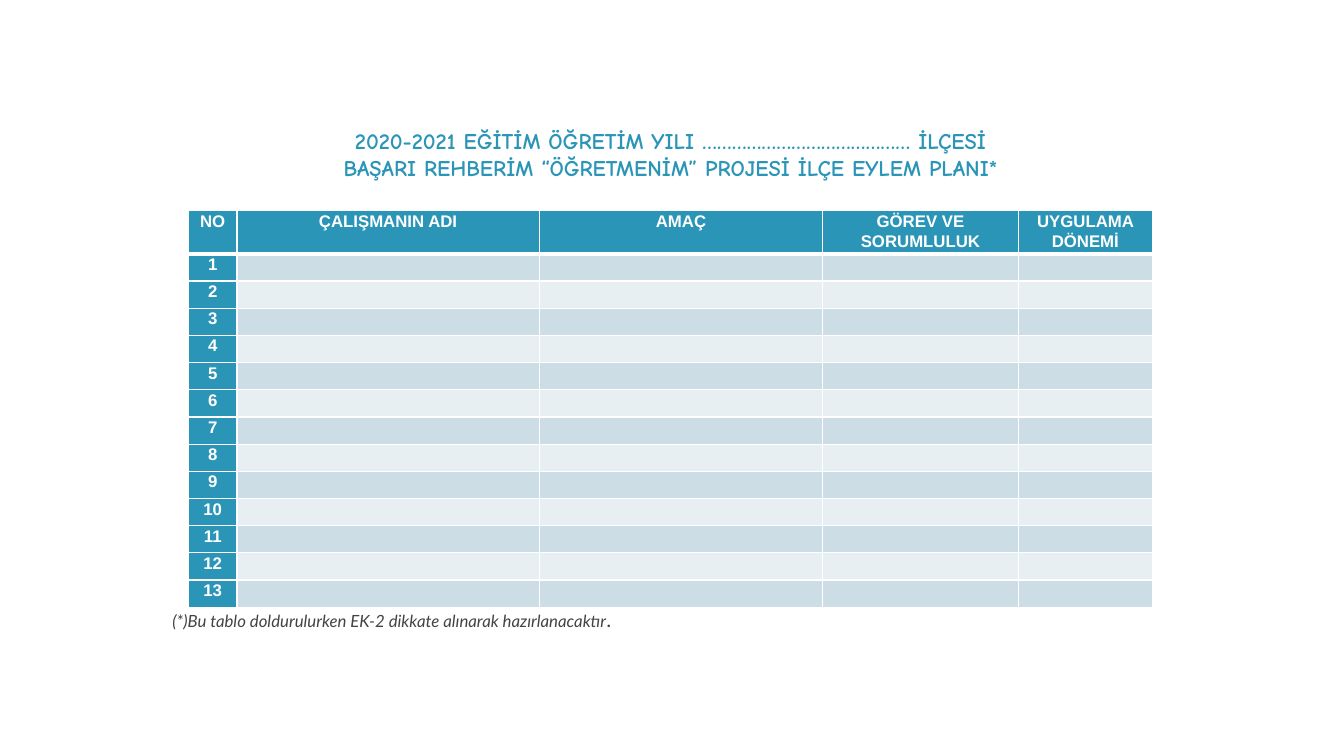
from lxml.etree import SubElement
from pptx import Presentation
from pptx.dml.color import RGBColor
from pptx.enum.text import PP_ALIGN as Align
from pptx.oxml import parse_xml
from pptx.oxml.ns import nsdecls, qn
from pptx.util import Inches, Pt

COLORS = {
    "teal": "2A95B7",
    "band_dark": "CDDDE6",
    "band_light": "E8EFF3",
    "white": "FFFFFF",
    "note": "434343",
}
HEADINGS = ["NO", "ÇALIŞMANIN ADI", "AMAÇ", "GÖREV VE SORUMLULUK", "UYGULAMA DÖNEMİ"]
COLUMN_WIDTHS = [0.48, 3, 2.81, 1.94, 1.33]
TITLE_LINES = [
    "2020-2021 EĞİTİM ÖĞRETİM YILI …………………………………… İLÇESİ",
    "BAŞARI REHBERİM “ÖĞRETMENİM” PROJESİ İLÇE EYLEM PLANI*",
]
PLAN_ROWS = 13
HEADER_HEIGHT = 0.42
ROW_HEIGHT = 0.27


def color(name):
    return RGBColor.from_string(COLORS[name])


def add_span(para, text, font, size, ink, bold=False, italic=False):
    span = para.add_run()
    span.text = text
    span.font.name = font
    span.font.size = Pt(size)
    span.font.color.rgb = color(ink)
    span.font.bold = bold
    span.font.italic = italic


def add_box(page, left, top, width, height, indent=0.1):
    box = page.shapes.add_textbox(Inches(left), Inches(top), Inches(width), Inches(height))
    frame = box.text_frame
    frame.word_wrap = True
    frame.margin_left = Inches(indent)
    frame.margin_right = frame.margin_top = frame.margin_bottom = Inches(0.1)
    return frame.paragraphs[0]


def add_title(page):
    para = add_box(page, 1.53, 1.16, 10.24, 1.09)
    para.alignment = Align.CENTER
    for number, line in enumerate(TITLE_LINES):
        if number:
            para.add_line_break()
        add_span(para, line, "Comic Neue", 16, "teal", bold=True)


def add_note(page):
    para = add_box(page, 1.53, 5.96, 10.24, 0.42, indent=0.18)
    add_span(para, "(*)Bu tablo doldurulurken EK-2 dikkate alınarak hazırlanacaktır",
             "Lato", 12, "note", italic=True)
    add_span(para, ".", "Lato", 12, "note", bold=True)


def set_borders(cell, top, bottom):
    widths = {"lnL": 1, "lnR": 1, "lnT": top, "lnB": bottom}
    properties = cell._tc.get_or_add_tcPr()
    for position, (side, width) in enumerate(widths.items()):
        properties.insert(position, parse_xml(
            f'<a:{side} {nsdecls("a")} w="{Pt(width)}"><a:solidFill>'
            f'<a:srgbClr val="{COLORS["white"]}"/></a:solidFill></a:{side}>'))


def fill_cell(cell, text, fill, top=1, bottom=1):
    cell.margin_left = cell.margin_right = Inches(0.07)
    cell.margin_top = cell.margin_bottom = 0
    cell.fill.solid()
    cell.fill.fore_color.rgb = color(fill)
    set_borders(cell, top, bottom)
    para = cell.text_frame.paragraphs[0]
    if text:
        para.alignment = Align.CENTER
        para.line_spacing = 1.07
        para.space_after = Pt(8)
        add_span(para, text, "Arial", 12, "white", bold=True)
    else:
        SubElement(para._p, qn("a:endParaRPr"), sz="1200")


def add_plan_table(page):
    height = HEADER_HEIGHT + PLAN_ROWS * ROW_HEIGHT
    frame = page.shapes.add_table(PLAN_ROWS + 1, len(HEADINGS), Inches(1.87), Inches(2.09),
                                  Inches(sum(COLUMN_WIDTHS)), Inches(height))
    table = frame.table
    table.horz_banding = False
    for column, width in zip(table.columns, COLUMN_WIDTHS):
        column.width = Inches(width)
    for row in table.rows:
        row.height = Inches(ROW_HEIGHT)
    table.rows[0].height = Inches(HEADER_HEIGHT)
    for index, heading in enumerate(HEADINGS):
        fill_cell(table.cell(0, index), heading, "teal", bottom=3)
    for number in range(1, PLAN_ROWS + 1):
        top = 3 if number == 1 else 1
        band = "band_dark" if number % 2 else "band_light"
        fill_cell(table.cell(number, 0), str(number), "teal", top)
        for index in range(1, len(HEADINGS)):
            fill_cell(table.cell(number, index), "", band, top)


def main():
    deck = Presentation()
    deck.slide_width = Inches(13.33)
    deck.slide_height = Inches(7.5)
    page = deck.slides.add_slide(deck.slide_layouts[6])
    add_title(page)
    add_note(page)
    add_plan_table(page)
    deck.save("out.pptx")


if __name__ == "__main__":
    main()
